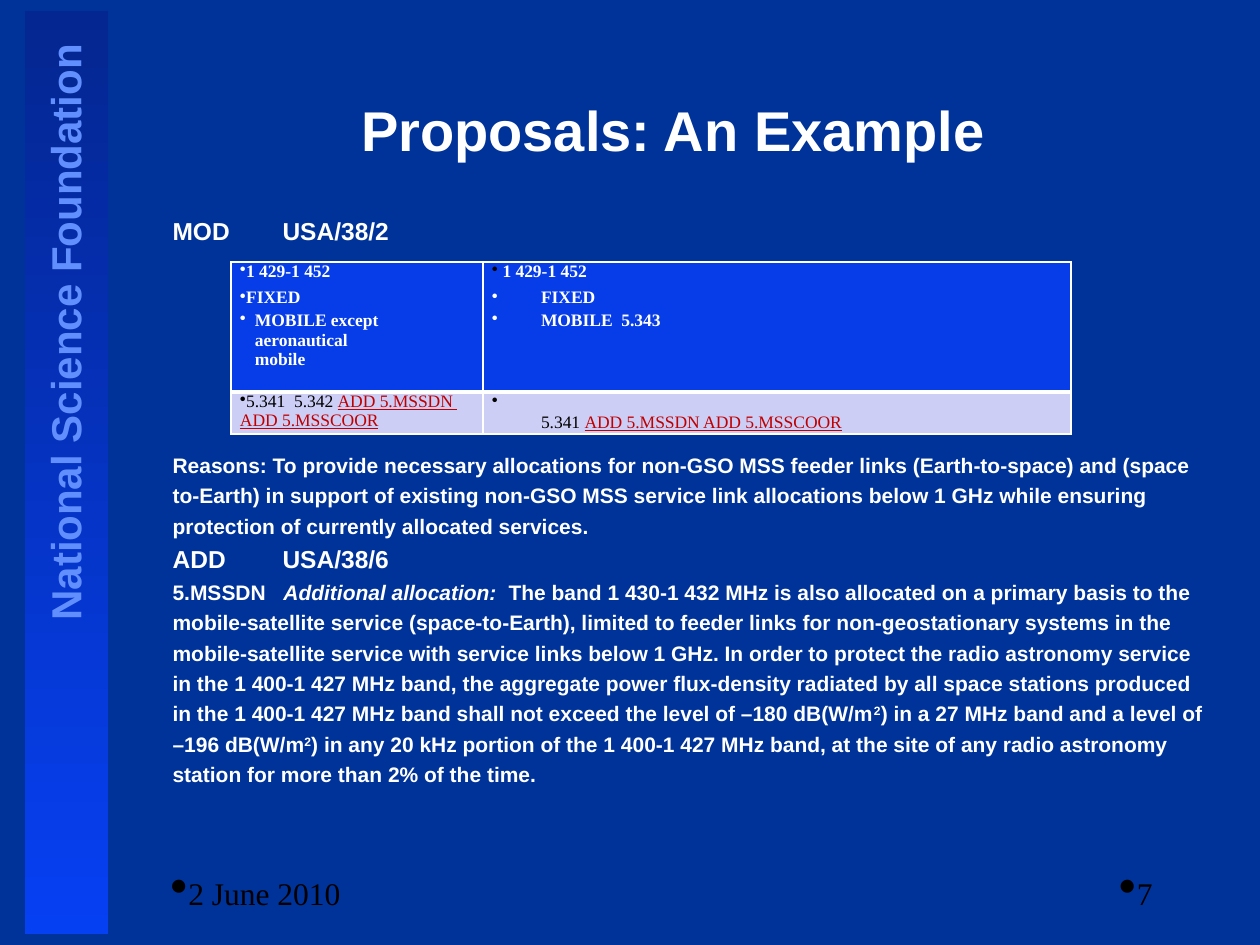
from lxml import etree
from pptx import Presentation, util as u
from pptx.dml.color import RGBColor
from pptx.enum import shapes, text
from pptx.oxml.ns import qn

PX = 914400 / 126  # one px in EMU
NAVY = RGBColor(0x00, 0x33, 0x99)
BAR_TOP = RGBColor(0x04, 0x26, 0x90)
BAR_BOTTOM = RGBColor(0x06, 0x40, 0xF3)
LIGHT_BLUE = RGBColor(0x61, 0x8F, 0xFD)
CELL_BLUE = RGBColor(0x06, 0x3D, 0xE8)
CELL_LILAC = RGBColor(0xCC, 0xCE, 0xF6)
RED = RGBColor(0xC0, 0x00, 0x00)
WHITE = RGBColor(0xFF, 0xFF, 0xFF)
BLACK = RGBColor(0x00, 0x00, 0x00)
SERIF = "Times New Roman"


def add_text(paragraph, words, size=12, font="Arial", color=WHITE, bold=False,
             italic=False, underline=False, raised=False):
    for number, line in enumerate(words.split("\n")):
        if number:
            paragraph.add_line_break()
            etree.SubElement(paragraph._p[-1], qn("a:rPr"), sz=str(size * 100))
        if not line:
            continue
        run = paragraph.add_run()
        run.text = line
        run.font.size = u.Pt(size)
        run.font.name = font
        run.font.color.rgb = color
        run.font.bold = bold
        run.font.italic = italic
        run.font.underline = underline
        if raised:
            run.font._element.set("baseline", "30000")


def set_list(paragraph, bullet=None, percent=100, indent=0, tabs=()):
    properties = paragraph._p.get_or_add_pPr()
    properties.set("marL", str(round(indent * PX)))
    properties.set("indent", str(round(-indent * PX)))
    if bullet:
        etree.SubElement(properties, qn("a:buSzPct"), val=str(percent * 1000))
        etree.SubElement(properties, qn("a:buChar"), char=bullet)
    else:
        etree.SubElement(properties, qn("a:buNone"))
    if tabs:
        tab_list = etree.SubElement(properties, qn("a:tabLst"))
        for tab in tabs:
            etree.SubElement(tab_list, qn("a:tab"), pos=str(round(tab * PX)), algn="l")


presentation = Presentation()
presentation.slide_width = u.Inches(10)
presentation.slide_height = u.Inches(7.5)
slide = presentation.slides.add_slide(presentation.slide_layouts[1])
slide.background.fill.solid()
slide.background.fill.fore_color.rgb = NAVY

# Side bar
bar = slide.shapes.add_shape(shapes.MSO_SHAPE.RECTANGLE,
                             *[round(v * PX) for v in (25, 11, 83, 923)])
bar.shadow.inherit = False
bar.line.fill.background()
bar.fill.gradient()
bar.fill.gradient_angle = 270
for stop, color in zip(bar.fill.gradient_stops, (BAR_TOP, BAR_BOTTOM)):
    stop.color.rgb = color

# Side bar name, date and page number
RIGHT, LEFT = text.PP_ALIGN.RIGHT, text.PP_ALIGN.LEFT
footer = dict(size=18, font=SERIF, color=BLACK)
for box, rotation, words, align, bullet, style in [
    ((-252, 285, 633, 63), 270, "National Science Foundation", LEFT, None,
     dict(size=24, color=LIGHT_BLUE, bold=True)),
    ((158, 861, 262, 63), 0, "2 June 2010", LEFT, "•", footer),
    ((903, 861, 262, 63), 0, "7", RIGHT, "•", footer),
]:
    label = slide.shapes.add_textbox(*[round(v * PX) for v in box])
    label.rotation = rotation
    label.text_frame.word_wrap = True
    label.text_frame.vertical_anchor = text.MSO_ANCHOR.MIDDLE
    paragraph = label.text_frame.paragraphs[0]
    paragraph.alignment = align
    set_list(paragraph, bullet, 160)
    add_text(paragraph, words, **style)

# Title and body placeholders
title, body = slide.shapes.title, slide.placeholders[1]
for shape, box in [(title, (147, 50, 1068, 158)), (body, (160, 210, 1068, 622))]:
    shape.left, shape.top, shape.width, shape.height = [round(v * PX) for v in box]
    shape.text_frame.word_wrap = True
    shape.text_frame.auto_size = text.MSO_AUTO_SIZE.NONE
title.text_frame.vertical_anchor = text.MSO_ANCHOR.MIDDLE
title.text_frame.paragraphs[0].alignment = text.PP_ALIGN.CENTER
add_text(title.text_frame.paragraphs[0], "Proposals: An Example ", size=32, bold=True)

# Body lines: space before in points, then runs with their format
heading, italic, raised = dict(size=14), dict(italic=True), dict(raised=True)
body_lines = [
    (0, [("MOD\tUSA/38/2", heading)]),
    (118, [("Reasons: To provide necessary allocations for non-GSO MSS feeder links "
            "(Earth-to-space) and (space", {})]),
    (3, [("to-Earth) in support of existing non-GSO MSS service link allocations "
          "below 1 GHz while ensuring", {})]),
    (3, [("protection of currently allocated services.", {})]),
    (3.5, [("ADD\tUSA/38/6", heading)]),
    (3, [("5.MSSDN   ", {}), ("Additional allocation:  ", italic),
         ("The band 1 430-1 432 MHz is also allocated on a primary basis to the", {})]),
    (3, [("mobile-satellite service (space-to-Earth), limited to feeder links for "
          "non-geostationary systems in the", {})]),
    (3, [("mobile-satellite service with service links below 1 GHz. In order to "
          "protect the radio astronomy service", {})]),
    (3, [("in the 1 400-1 427 MHz band, the aggregate power flux‑density radiated "
          "by all space stations produced", {})]),
    (3, [("in the 1 400-1 427 MHz band shall not exceed the level of –180 dB(W/m", {}),
         ("2", raised), (") in a 27 MHz band and a level of", {})]),
    (3, [("–196 dB(W/m", {}), ("2", raised),
         (") in any 20 kHz portion of the 1 400-1 427 MHz band, at the site of any "
          "radio astronomy", {})]),
    (3, [("station for more than 2% of the time.", {})]),
]
for number, (space, runs) in enumerate(body_lines):
    frame = body.text_frame
    paragraph = frame.add_paragraph() if number else frame.paragraphs[0]
    set_list(paragraph, indent=47)
    paragraph.space_before = u.Pt(space)
    for words, style in runs:
        add_text(paragraph, words, bold=True, **style)

# Allocation table: each paragraph is space before, indent, runs
white, black = dict(bold=True), dict(color=BLACK)
added = dict(color=RED, underline=True)
cells = [
    [[(0, 0, [("1 429-1 452", white)]),
      (2, 0, [("FIXED", white)]),
      (0, 15, [("MOBILE except aeronautical\nmobile", white)])],
     [(0, 0, [(" ", black), ("1 429-1 452", white)]),
      (2, 0, [("\t\tFIXED", white)]),
      (0, 0, [("\t\tMOBILE  5.343", white)])]],
    [[(0, 0, [("5.341  5.342 ", black), ("ADD 5.MSSDN \nADD 5.MSSCOOR", added)])],
     [(0, 0, [("\n\t\t5.341 ", black), ("ADD 5.MSSDN ADD 5.MSSCOOR", added)])]],
]
table = slide.shapes.add_table(2, 2, *[round(v * PX) for v in (231, 262, 840, 168)]).table
table.first_row = table.horz_banding = False
for column, width in zip(table.columns, (252, 588)):
    column.width = round(width * PX)
for row, height in zip(table.rows, (130, 38)):
    row.height = round(height * PX)

row_looks = [(CELL_BLUE, dict(L=1, R=1, T=1, B=3)), (CELL_LILAC, dict(L=1, R=1, T=3, B=1))]
for row_number, (fill_color, borders) in enumerate(row_looks):
    for column_number, paragraphs in enumerate(cells[row_number]):
        cell = table.cell(row_number, column_number)
        cell.margin_left = cell.margin_right = round(9 * PX)
        cell.margin_top = cell.margin_bottom = 0
        for side, width in borders.items():
            line = etree.SubElement(cell._tc.get_or_add_tcPr(), qn("a:ln" + side),
                                    w=str(u.Pt(width)))
            fill = etree.SubElement(line, qn("a:solidFill"))
            etree.SubElement(fill, qn("a:srgbClr"), val=str(WHITE))
        cell.fill.solid()
        cell.fill.fore_color.rgb = fill_color
        for number, (space, indent, runs) in enumerate(paragraphs):
            frame = cell.text_frame
            paragraph = frame.add_paragraph() if number else frame.paragraphs[0]
            set_list(paragraph, "•", indent=indent, tabs=(15, 49, 64, 261, 286))
            paragraph.space_before = u.Pt(space)
            paragraph.space_after = u.Pt(2)
            for words, style in runs:
                add_text(paragraph, words, size=10, font=SERIF, **style)

presentation.save("out.pptx")
